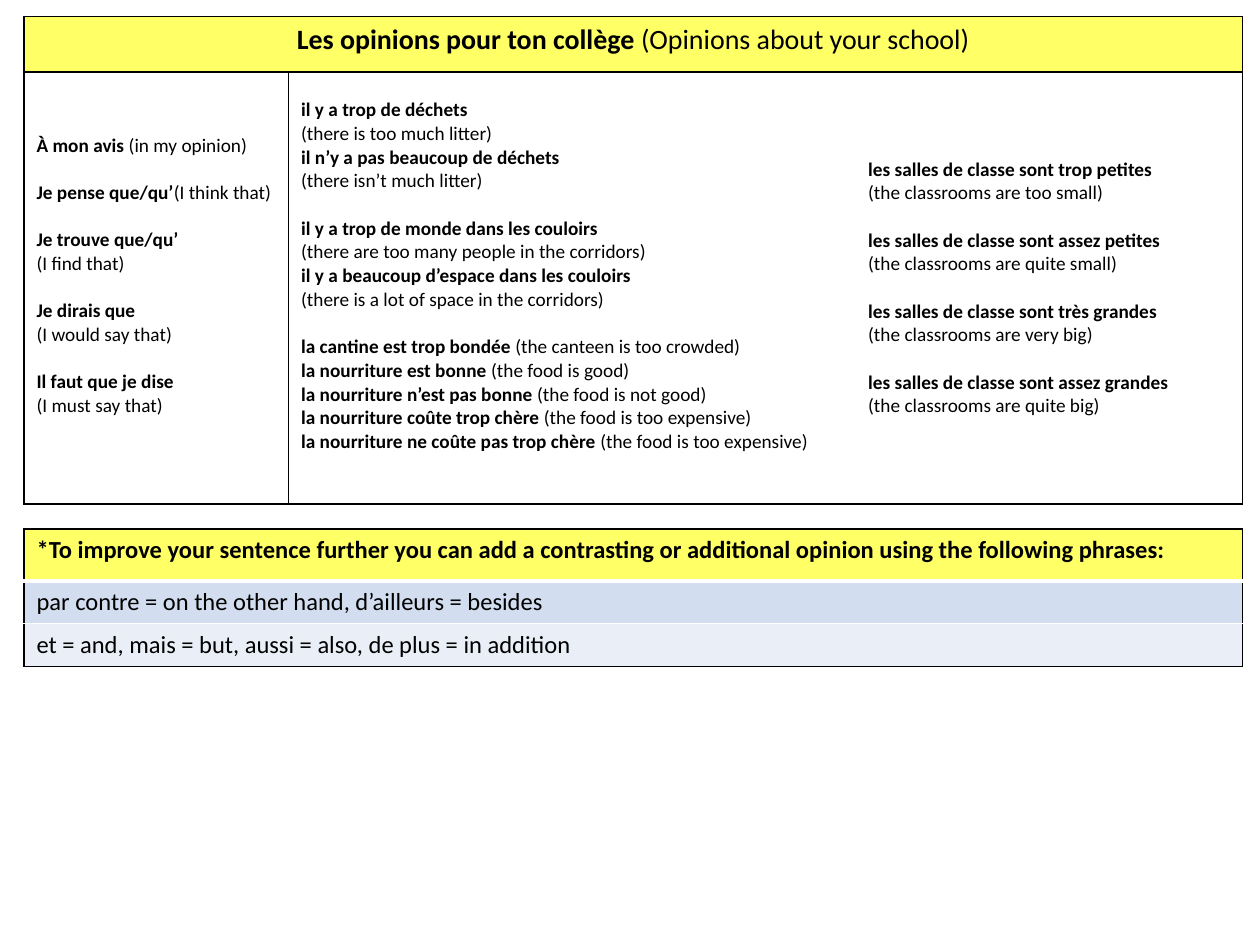
from lxml.etree import SubElement
from pptx import Presentation
from pptx.dml.color import RGBColor
from pptx.enum.text import MSO_ANCHOR, PP_ALIGN
from pptx.oxml.ns import qn
from pptx.util import Inches, Pt

BLACK = RGBColor(0x00, 0x00, 0x00)
WHITE = RGBColor(0xFF, 0xFF, 0xFF)
YELLOW = RGBColor(0xFF, 0xFF, 0x66)
BLUE = RGBColor(0xD2, 0xDE, 0xEF)
PALE_BLUE = RGBColor(0xEA, 0xEF, 0xF7)

LEFT, WIDTH = 0.19, 9.67
THIN = (BLACK, 1)
WHITE_THIN = (WHITE, 1)
WHITE_THICK = (WHITE, 3)

# Each cell is a list of groups; each line of a group is (bold part, plain part).
OPENERS = [
    [("À mon avis ", "(in my opinion)")],
    [("Je pense que/qu’", "(I think that)")],
    [("Je trouve que/qu’", ""), ("", "(I find that)")],
    [("Je dirais que", ""), ("", "(I would say that)")],
    [("Il faut que je dise", ""), ("", "(I must say that)")],
]
SCHOOL_LIFE = [
    [("il y a trop de déchets", ""),
     ("", "(there is too much litter)"),
     ("il n’y a pas beaucoup de déchets", ""),
     ("", "(there isn’t much litter)")],
    [("il y a trop de monde dans les couloirs", ""),
     ("", "(there are too many people in the corridors)"),
     ("il y a beaucoup d’espace dans les couloirs", ""),
     ("", "(there is a lot of space in the corridors)")],
    [("la cantine est trop bondée ", "(the canteen is too crowded)"),
     ("la nourriture est bonne ", "(the food is good)"),
     ("la nourriture n’est pas bonne ", "(the food is not good)"),
     ("la nourriture coûte trop chère ", "(the food is too expensive)"),
     ("la nourriture ne coûte pas trop chère ", "(the food is too expensive)")],
]
CLASSROOMS = [
    [(f"les salles de classe sont {french}", ""),
     ("", f"(the classrooms are {english})")]
    for french, english in [
        ("trop petites", "too small"),
        ("assez petites", "quite small"),
        ("très grandes", "very big"),
        ("assez grandes", "quite big"),
    ]
]
TITLE = [[("Les opinions pour ton collège ", "(Opinions about your school)")]]
TIP = [[("*To improve your sentence further you can add a contrasting or "
         "additional opinion using the following phrases:", "")]]
CONTRASTS = [[("", "par contre = on the other hand, d’ailleurs = besides")]]
ADDITIONS = [[("", "et = and, mais = but, aussi = also, de plus = in addition")]]


def add_run(p, text, size=11, bold=False, color=BLACK, font="Calibri"):
    r = p.add_run()
    r.text = text
    r.font.name = font
    r.font.size = Pt(size)
    r.font.bold = bold
    r.font.color.rgb = color


class Deck:
    def __init__(self, slide, group_gap=13.4):
        self.s = slide
        self.group_gap = Pt(group_gap)

    def table(self, top, cols, rows):
        shape = self.s.shapes.add_table(
            len(rows), len(cols), Inches(LEFT), Inches(top),
            Inches(sum(cols)), Inches(sum(rows)))
        table = shape.table
        for column, width in zip(table.columns, cols):
            column.width = Inches(width)
        for row, height in zip(table.rows, rows):
            row.height = Inches(height)
        return table

    def borders(self, cell, left=THIN, right=THIN, top=THIN, bottom=THIN):
        """Set each side to (colour, points), or to no line when None."""
        tc_pr = cell._tc.get_or_add_tcPr()
        for tag, line in zip(("lnL", "lnR", "lnT", "lnB"),
                             (left, right, top, bottom)):
            ln = SubElement(tc_pr, qn(f"a:{tag}"))
            if line is None:
                SubElement(ln, qn("a:noFill"))
                continue
            color, width = line
            ln.set("w", str(Pt(width)))
            fill = SubElement(ln, qn("a:solidFill"))
            SubElement(fill, qn("a:srgbClr"), val=str(color))

    def cell(self, cell, groups, size=11, fill=None, align=PP_ALIGN.LEFT,
             anchor=MSO_ANCHOR.TOP, bottom_margin=0.05, **sides):
        self.borders(cell, **sides)
        if fill is None:
            cell.fill.background()
        else:
            cell.fill.solid()
            cell.fill.fore_color.rgb = fill
        cell.vertical_anchor = anchor
        cell.margin_bottom = Inches(bottom_margin)
        tf = cell.text_frame
        p = tf.paragraphs[0]
        for g, group in enumerate(groups):
            for i, (bold, plain) in enumerate(group):
                if g or i:
                    p = tf.add_paragraph()
                p.alignment = align
                if g and i == 0:
                    p.space_before = self.group_gap
                if bold:
                    add_run(p, bold, size=size, bold=True)
                if plain:
                    add_run(p, plain, size=size)


def main():
    prs = Presentation()
    prs.slide_width, prs.slide_height = Inches(10), Inches(7.5)
    deck = Deck(prs.slides.add_slide(prs.slide_layouts[6]))

    opinions = deck.table(0.13, cols=[2.1, 4.5, 3.07], rows=[0.44, 3.43])
    title = opinions.cell(0, 0)
    title.merge(opinions.cell(0, 2))
    deck.cell(title, TITLE, size=16, fill=YELLOW, align=PP_ALIGN.CENTER)
    for col in (1, 2):
        deck.borders(opinions.cell(0, col))
    middle = MSO_ANCHOR.MIDDLE
    deck.cell(opinions.cell(1, 0), OPENERS, anchor=middle, bottom_margin=0.24)
    deck.cell(opinions.cell(1, 1), SCHOOL_LIFE, anchor=middle,
              bottom_margin=0.24, right=None)
    deck.cell(opinions.cell(1, 2), CLASSROOMS, anchor=middle, left=None)

    phrases = deck.table(4.2, cols=[WIDTH], rows=[0.41, 0.34, 0.34])
    phrase_rows = [
        (TIP, YELLOW, THIN, WHITE_THICK),
        (CONTRASTS, BLUE, WHITE_THICK, WHITE_THIN),
        (ADDITIONS, PALE_BLUE, WHITE_THIN, THIN),
    ]
    for row, (groups, fill, top, bottom) in enumerate(phrase_rows):
        deck.cell(phrases.cell(row, 0), groups, size=14, fill=fill,
                  top=top, bottom=bottom)

    prs.save("out.pptx")


if __name__ == "__main__":
    main()
